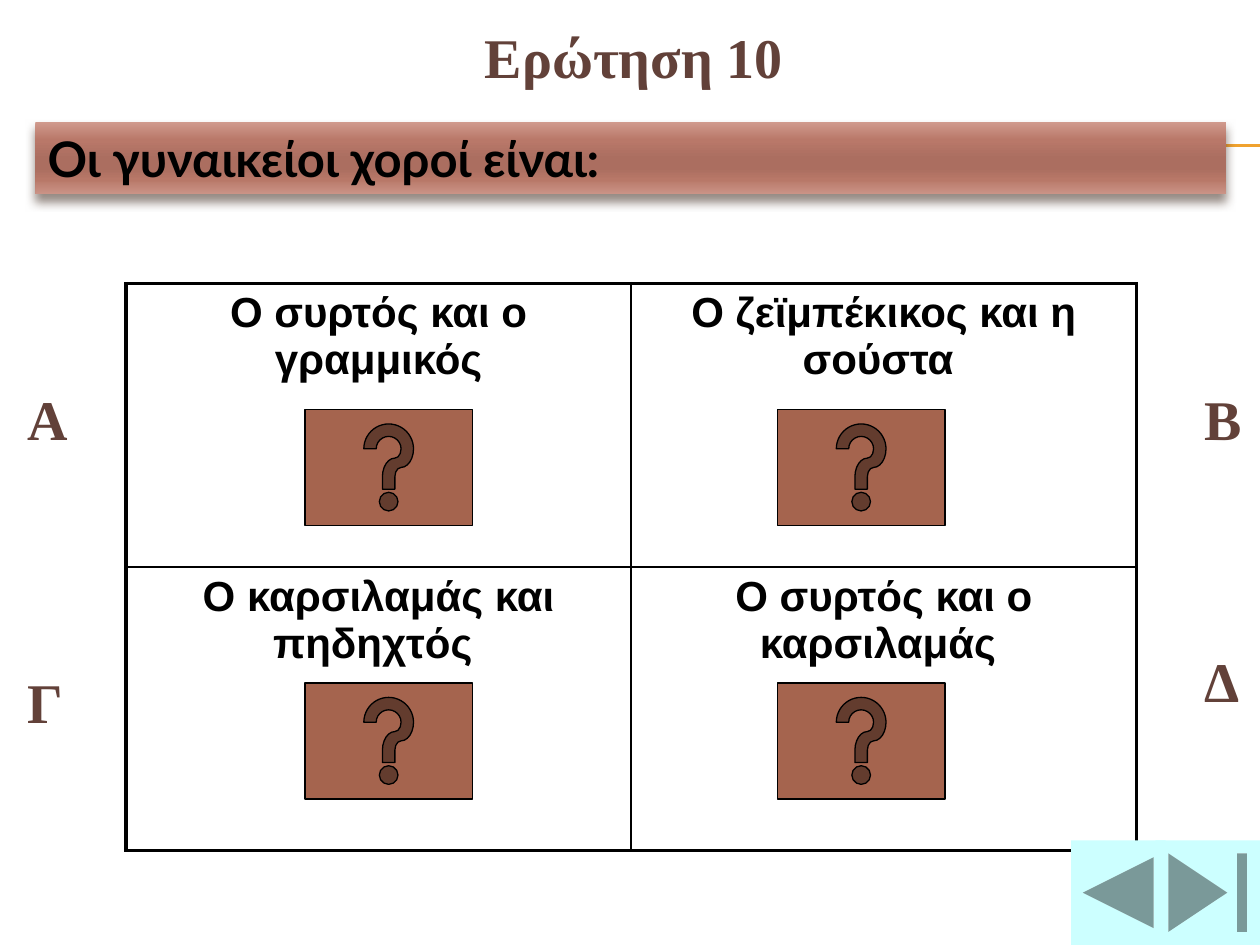
"""Build a quiz slide with four answers, help buttons and navigation."""
from lxml import etree
from pptx import Presentation
from pptx.dml.color import RGBColor
from pptx.enum import shapes, text
from pptx.oxml import ns, parse_xml
from pptx.util import Inches, Pt

COLORS = {"ink": "000000", "paper": "FFFFFF", "label": "624139",
          "button": "A5644E", "nav": "CCFFFF", "rule": "F0A22E",
          "shadow": "4E3B30"}
BANNER_STOPS = [(0, "D09A8D"), (25, "B97869"), (50, "AB6E60"),
                (65, "AB6E60"), (80, "B87868"), (100, "CA9386")]
ANSWERS = [["Ο συρτός και ο γραμμικός", "Ο ζεϊμπέκικος και η σούστα "],
           ["Ο καρσιλαμάς και πηδηχτός ", "Ο συρτός και ο καρσιλαμάς "]]
LABELS = [("Α", 0.12, 3), ("Β", 9.46, 3), ("Γ", 0.12, 5.25), ("Δ", 9.46, 5.08)]
A_NS = ns.nsdecls("a")


def rgb(name):
    """Return the named colour."""
    return RGBColor.from_string(COLORS[name])


def write(tf, words, size, font, color, before=0):
    """Set bold text, with space before as a percentage of the line."""
    tf.text = words
    p = tf.paragraphs[0]
    r = p.runs[0]
    r.font.size, r.font.name, r.font.bold = Pt(size), font, True
    r.font.color.rgb = rgb(color)
    if before:
        p.space_before = Pt(0)
        spacing = p._p.pPr.find(ns.qn("a:spcBef"))
        spacing.clear()
        etree.SubElement(spacing, ns.qn("a:spcPct")).set("val", str(before * 1000))
    return p


def add_label(s, words, x, y, w, h):
    """Add a heading or an answer letter."""
    tf = s.shapes.add_textbox(Inches(x), Inches(y), Inches(w), Inches(h)).text_frame
    tf.word_wrap = True
    tf.auto_size = text.MSO_AUTO_SIZE.SHAPE_TO_FIT_TEXT
    write(tf, words, 32, "Times New Roman", "label", 50)


def add_rule(s, x, y, w):
    """Add a thin horizontal rule."""
    line = s.shapes.add_connector(shapes.MSO_CONNECTOR.STRAIGHT, Inches(x),
                                  Inches(y), Inches(x + w), Inches(y))
    line.line.color.rgb, line.line.width = rgb("rule"), Pt(0.75)
    etree.SubElement(line._element.spPr, ns.qn("a:effectLst"))


def set_borders(cell, widths):
    """Draw the left, right, top and bottom borders of a cell."""
    tc_pr = cell._tc.get_or_add_tcPr()
    for i, (side, width) in enumerate(zip("LRTB", widths)):
        tc_pr.insert(i, parse_xml(
            f'<a:ln{side} {A_NS} w="{Pt(width)}"><a:solidFill>'
            f'<a:srgbClr val="{COLORS["ink"]}"/></a:solidFill></a:ln{side}>'))


def add_answers(s, x, y, w, h):
    """Add the answer grid with a heavy outer frame."""
    table = s.shapes.add_table(2, 2, Inches(x), Inches(y), Inches(w), Inches(h)).table
    table.first_row = table.horz_banding = False
    for i, row in enumerate(ANSWERS):
        table.rows[i].height = Inches(h / 2)
        table.columns[i].width = Inches(w / 2)
        for j, words in enumerate(row):
            cell = table.cell(i, j)
            cell.fill.solid()
            cell.fill.fore_color.rgb = rgb("paper")
            p = write(cell.text_frame, words, 24, "Arial", "ink", 20)
            p.alignment = text.PP_ALIGN.CENTER
            outer = (j == 0, j == 1, i == 0, i == 1)
            set_borders(cell, [2.25 if edge else 1 for edge in outer])


def add_button(s, kind, fill, x, y, w, h, outlined=False):
    """Add an action button."""
    sp = s.shapes.add_shape(kind, Inches(x), Inches(y), Inches(w), Inches(h))
    sp.shadow.inherit = False
    sp.fill.solid()
    sp.fill.fore_color.rgb = rgb(fill)
    if outlined:
        sp.line.color.rgb, sp.line.width = rgb("ink"), Pt(0.75)
    else:
        sp.line.fill.background()


def add_help_buttons(s, x, y, dx, dy):
    """Add one help button for each answer."""
    for i in range(2):
        for j in range(2):
            add_button(s, shapes.MSO_SHAPE.ACTION_BUTTON_HELP, "button",
                       x + j * dx, y + i * dy, 1.33, 0.92, True)


def add_navigation(s, x, y, w, h):
    """Add the end and back buttons."""
    add_button(s, shapes.MSO_SHAPE.ACTION_BUTTON_END, "nav", x + w - h, y, h, h)
    add_button(s, shapes.MSO_SHAPE.ACTION_BUTTON_BACK_OR_PREVIOUS, "nav", x, y, 0.75, h)


def add_banner(s, words, x, y, w, h):
    """Add the question on a shaded bar with a soft shadow."""
    sp = s.shapes.add_shape(shapes.MSO_SHAPE.RECTANGLE, Inches(x), Inches(y),
                            Inches(w), Inches(h))
    sp.line.fill.background()
    sp.fill.gradient()
    sp.fill.gradient_angle = 270
    stops = sp._element.spPr.find(ns.qn("a:gradFill")).find(ns.qn("a:gsLst"))
    stops.clear()
    for position, color in BANNER_STOPS:
        stop = etree.SubElement(stops, ns.qn("a:gs"), pos=str(position * 1000))
        etree.SubElement(stop, ns.qn("a:srgbClr"), val=color)
    sp.shadow.inherit = False
    sp._element.spPr.find(ns.qn("a:effectLst")).append(parse_xml(
        f'<a:outerShdw {A_NS} blurRad="{Pt(6)}" dist="{Pt(4)}" dir="5400000" '
        f'rotWithShape="0"><a:srgbClr val="{COLORS["shadow"]}">'
        '<a:alpha val="60000"/></a:srgbClr></a:outerShdw>'))
    tf = sp.text_frame
    tf.word_wrap = True
    tf.vertical_anchor = text.MSO_ANCHOR.MIDDLE
    write(tf, words, 28, "Lato", "ink").alignment = text.PP_ALIGN.LEFT


def add_question(s, w, h):
    """Lay out the whole question slide."""
    for y in (1.15, 1.16):
        add_rule(s, 0.56, y, w - 0.56)
    add_answers(s, 1, 2.25, 8.02, 4.5)
    for letter, x, y in LABELS:
        add_label(s, letter, x, y, 0.5, 0.63)
    add_label(s, "Ερώτηση 10", 3.75, 0.13, 2.67, 0.64)
    add_help_buttons(s, 2.42, 3.25, 3.75, 2.17)
    add_navigation(s, w - 1.5, h - 0.83, 1.5, 0.83)
    add_banner(s, "Οι γυναικείοι χοροί είναι:", 0.28, 0.97, 9.45, 0.57)


def main():
    """Build and save the presentation."""
    prs = Presentation()
    prs.slide_width, prs.slide_height = Inches(10), Inches(7.5)
    add_question(prs.slides.add_slide(prs.slide_layouts[6]), 10, 7.5)
    prs.save("out.pptx")


if __name__ == "__main__":
    main()
